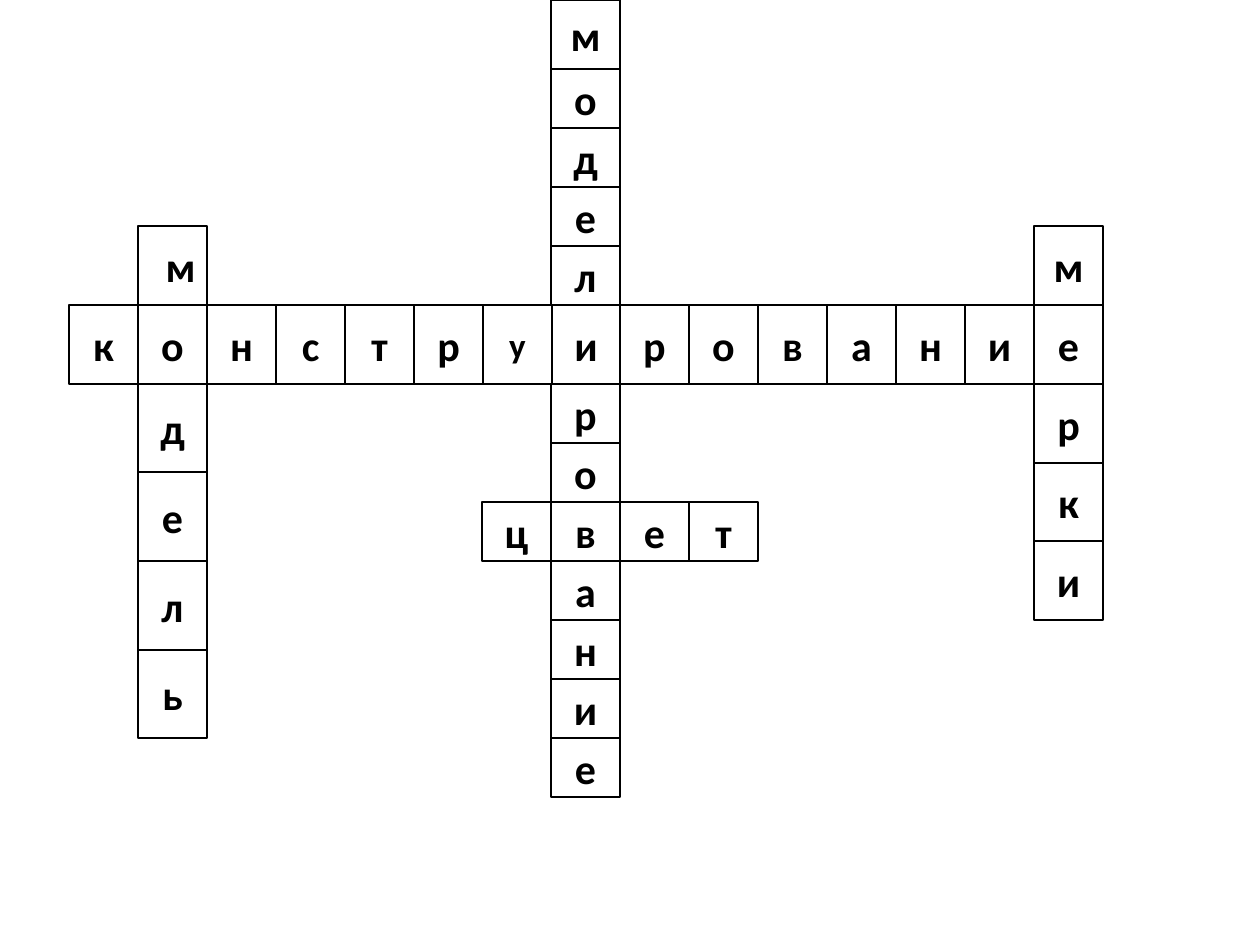
import dataclasses

import pptx
import pptx.dml.color
import pptx.enum.shapes
import pptx.enum.text
import pptx.util

EMU_PER_PX = 914400 // 126


@dataclasses.dataclass(frozen=True)
class Theme:
    ink: pptx.dml.color.RGBColor = pptx.dml.color.RGBColor(0, 0, 0)
    font: str = "Calibri"
    letter_size: int = 24
    small_size: int = 20
    line_width: float = 1.42


def px(length):
    return pptx.util.Emu(length * EMU_PER_PX)


class Crossword:
    def __init__(self, page, theme):
        self.page = page
        self.theme = theme

    def cell(self, letter, left, top, width, height):
        box = self.page.shapes.add_shape(
            pptx.enum.shapes.MSO_SHAPE.FLOWCHART_PROCESS,
            px(left), px(top), px(width), px(height))
        box.shadow.inherit = False
        box.fill.background()
        box.line.color.rgb = self.theme.ink
        box.line.width = pptx.util.Pt(self.theme.line_width)
        frame = box.text_frame
        frame.text = letter
        frame.word_wrap = False
        frame.vertical_anchor = pptx.enum.text.MSO_ANCHOR.MIDDLE
        frame.margin_left = frame.margin_right = 0
        frame.margin_top = frame.margin_bottom = 0
        para = frame.paragraphs[0]
        para.alignment = pptx.enum.text.PP_ALIGN.CENTER
        span = para.runs[0]
        span.font.name = self.theme.font
        span.font.size = pptx.util.Pt(self.theme.letter_size)
        span.font.bold = True
        span.font.color.rgb = self.theme.ink
        return box

    def edges(self, word, start, end):
        marks = [round(start + (end - start) * index / len(word))
                 for index in range(len(word) + 1)]
        return zip(word, marks, marks[1:])

    def across(self, word, left, right, top, height):
        return [self.cell(letter, start, top, end - start, height)
                for letter, start, end in self.edges(word, left, right)]

    def down(self, word, left, top, bottom, width=69):
        return [self.cell(letter, left, start, width, end - start)
                for letter, start, end in self.edges(word, top, bottom)]


def main():
    deck = pptx.Presentation()
    deck.slide_width = pptx.util.Inches(10)
    deck.slide_height = pptx.util.Inches(7.5)
    theme = Theme()
    crossword = Crossword(deck.slides.add_slide(deck.slide_layouts[6]), theme)

    main_word = crossword.across("конструирование", 69, 1103, 305, 79)
    small_letter = main_word[6].text_frame.paragraphs[0].runs[0]
    small_letter.font.size = pptx.util.Pt(theme.small_size)

    model_start = crossword.down("м", 138, 226, 305)
    model_start[0].text_frame.margin_left = px(16)
    crossword.down("дель", 138, 384, 738)

    crossword.down("м", 551, 0, 69)
    crossword.down("одел", 551, 69, 305)
    crossword.down("рование", 551, 384, 797)

    crossword.across("ц", 482, 551, 502, 59)
    crossword.across("ет", 620, 758, 502, 59)

    crossword.down("м", 1034, 226, 305)
    crossword.down("рки", 1034, 384, 620)

    deck.save("out.pptx")


if __name__ == "__main__":
    main()
